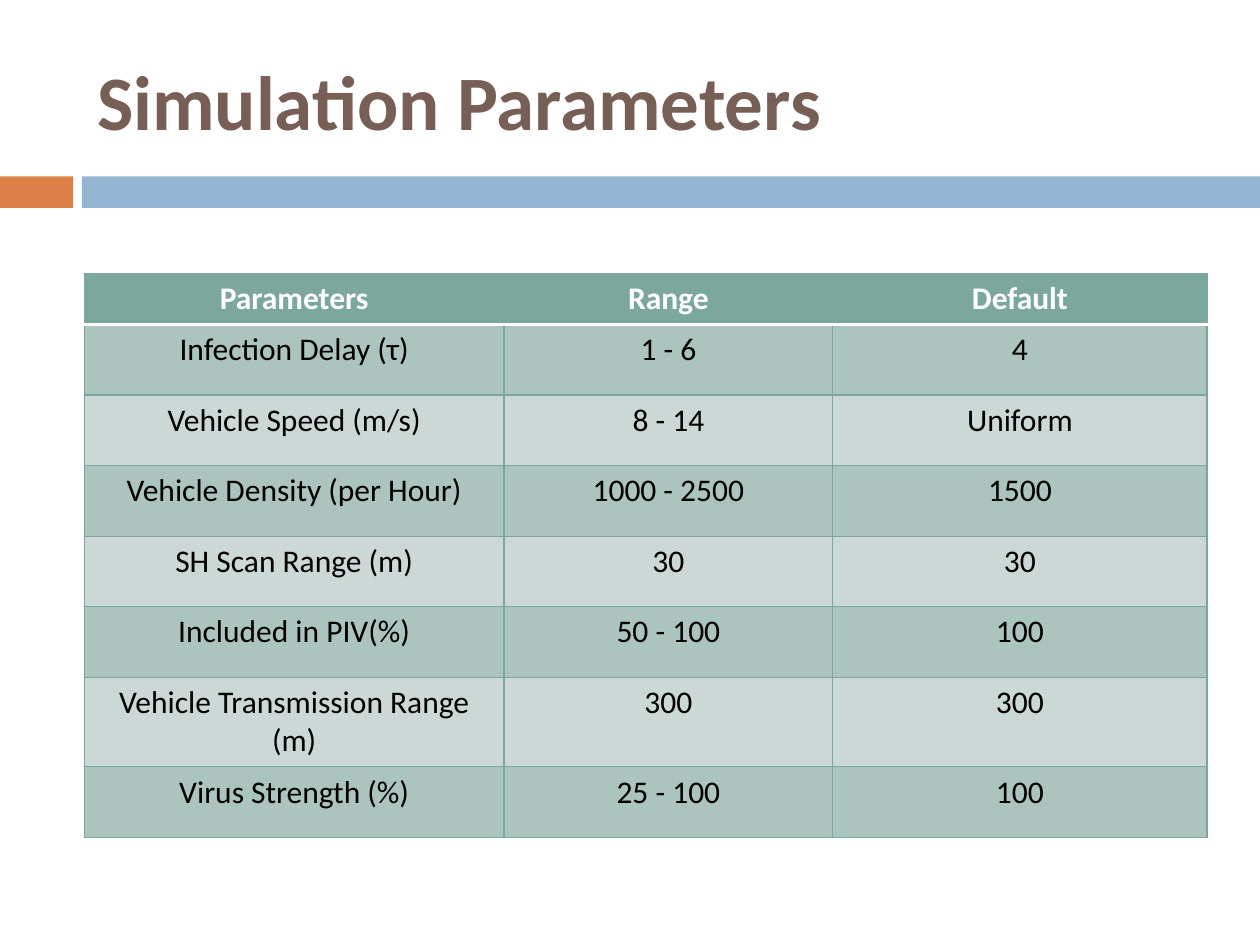
from pptx import Presentation
from pptx.dml.color import RGBColor as Rgb
from pptx.enum.shapes import MSO_SHAPE as Shape
from pptx.enum.text import MSO_ANCHOR as Anchor, PP_ALIGN as Align
from pptx.oxml.ns import qn
from pptx.util import Inches, Pt
from lxml.etree import SubElement as Sub

HUES = {
    "title": "775F55", "orange": "DD8047", "blue": "94B6D2",
    "head": "7BA79D", "odd": "ABC4BE", "even": "CCD8D5",
    "white": "FFFFFF", "black": "000000",
}
FACE = "Calibri"
COLS = [3.33, 2.61, 2.97]
HEAD, BODY = 0.31, 0.56
ROWS = [
    ("Parameters", "Range", "Default"),
    ("Infection Delay (τ)", "1 - 6", "4"),
    ("Vehicle Speed (m/s)", "8 - 14", "Uniform"),
    ("Vehicle Density (per Hour)", "1000 - 2500", "1500"),
    ("SH Scan Range (m)", "30", "30"),
    ("Included in PIV(%)", "50 - 100", "100"),
    ("Vehicle Transmission Range (m)", "300", "300"),
    ("Virus Strength (%)", "25 - 100", "100"),
]


def hue(name):
    """Return the named colour."""
    return Rgb.from_string(HUES[name])


def style(para, size, color, bold):
    """Set the font of a paragraph."""
    font = para.font
    font.name, font.size, font.bold = FACE, Pt(size), bold
    font.color.rgb = hue(color)


def add_band(slide, left, top, width, height):
    """Draw the two-colour band, split by a narrow gap."""
    tab, gap = 0.58, 0.07
    parts = [(left, tab, "orange"), (left + tab + gap, width - tab - gap, "blue")]
    for x, wide, color in parts:
        bar = slide.shapes.add_shape(
            Shape.RECTANGLE, Inches(x), Inches(top), Inches(wide), Inches(height))
        bar.shadow.inherit = False
        bar.fill.solid()
        bar.fill.fore_color.rgb = hue(color)
        bar.line.fill.background()


def add_title(slide, left, top, width, height):
    """Place and format the slide title."""
    title = slide.shapes.title
    title.left, title.top = Inches(left), Inches(top)
    title.width, title.height = Inches(width), Inches(height)
    frame = title.text_frame
    frame.text = "Simulation Parameters"
    frame.vertical_anchor = Anchor.MIDDLE
    para = frame.paragraphs[0]
    para.alignment = Align.LEFT
    style(para, 44, "title", True)


def add_edge(cell, side, color, width):
    """Draw one border of a cell."""
    props = cell._tc.get_or_add_tcPr()
    line = Sub(props, qn(f"a:ln{side}"), w=str(Pt(width)))
    fill = Sub(line, qn("a:solidFill"))
    Sub(fill, qn("a:srgbClr"), val=HUES[color])


def fill_cell(cell, text, row):
    """Write and format a cell according to its row."""
    for side in "LRTB":
        rule = (row, side) in {(0, "B"), (1, "T")}
        add_edge(cell, side, *(("white", 1.5) if rule else ("head", 0.79)))
    cell.fill.solid()
    shade = "head" if row == 0 else "odd" if row % 2 else "even"
    cell.fill.fore_color.rgb = hue(shade)
    cell.text = text
    para = cell.text_frame.paragraphs[0]
    para.alignment = Align.CENTER
    style(para, 18, "black" if row else "white", row == 0)


def add_grid(slide, left, top, width, height):
    """Add the table of parameters."""
    table = slide.shapes.add_table(
        len(ROWS), len(COLS), Inches(left), Inches(top),
        Inches(width), Inches(height)).table
    for col, wide in zip(table.columns, COLS):
        col.width = Inches(wide)
    for r, texts in enumerate(ROWS):
        table.rows[r].height = Inches(BODY if r else HEAD)
        for c, text in enumerate(texts):
            fill_cell(table.cell(r, c), text, r)


def main():
    """Build and save the slide."""
    deck = Presentation()
    deck.slide_width, deck.slide_height = Inches(10), Inches(7.5)
    slide = deck.slides.add_slide(deck.slide_layouts[5])
    add_band(slide, 0, 1.4, 10, 0.25)
    add_title(slide, 0.67, 0.25, 8.92, 1.08)
    add_grid(slide, 0.67, 2.17, 8.92, 4.34)
    deck.save("out.pptx")


if __name__ == "__main__":
    main()
